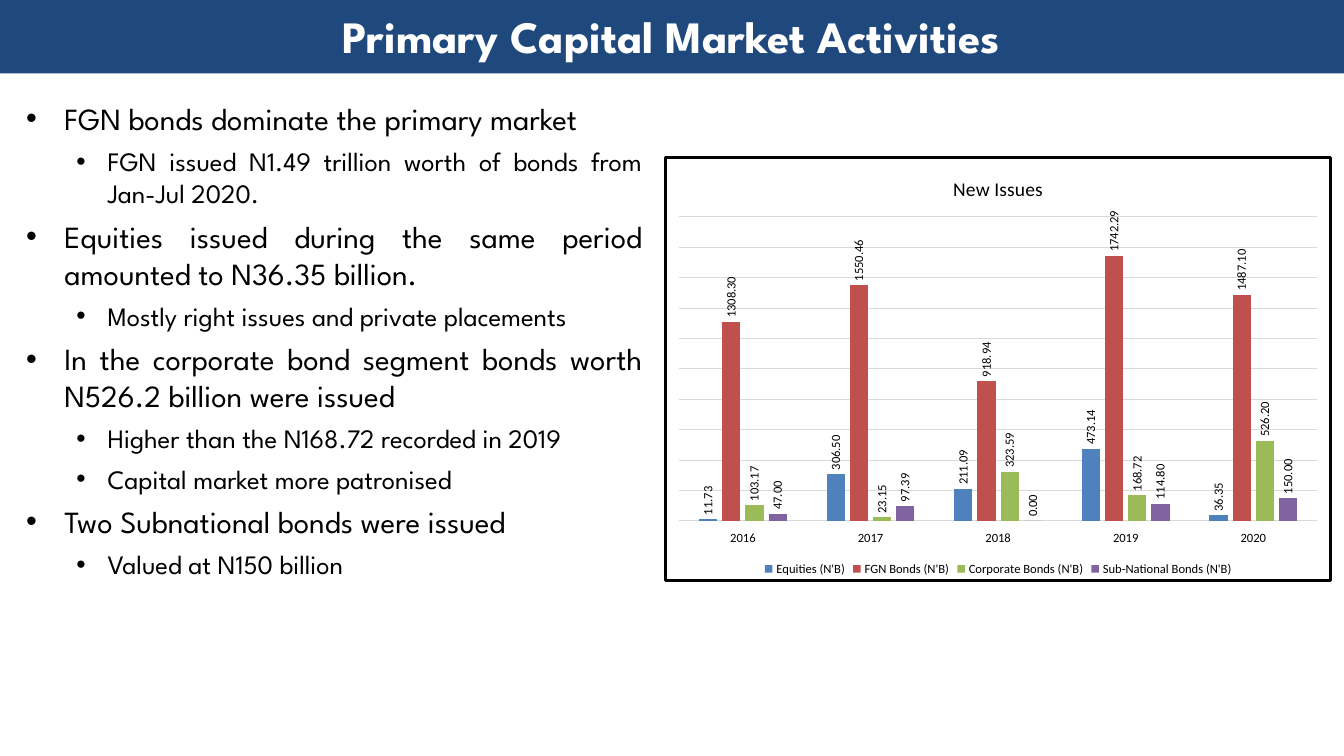
from lxml import etree
from pptx import Presentation
from pptx.chart.data import CategoryChartData
from pptx.dml.color import RGBColor
from pptx.enum.chart import XL_CHART_TYPE as ChartType
from pptx.enum.chart import XL_LABEL_POSITION as LabelPosition
from pptx.enum.chart import XL_LEGEND_POSITION as LegendPosition
from pptx.enum.chart import XL_TICK_LABEL_POSITION as TickLabels
from pptx.enum.chart import XL_TICK_MARK as TickMark
from pptx.enum.shapes import MSO_SHAPE as Preset
from pptx.enum.text import MSO_ANCHOR as Anchor
from pptx.enum.text import PP_ALIGN as Align
from pptx.oxml import parse_xml
from pptx.oxml.ns import nsdecls, qn
from pptx.util import Inches, Pt

NAVY = RGBColor(0x1F, 0x49, 0x7D)
WHITE = RGBColor(0xFF, 0xFF, 0xFF)
BLACK = RGBColor(0x00, 0x00, 0x00)
GRID_GREY = RGBColor(0xD9, 0xD9, 0xD9)
BLUE = RGBColor(0x4F, 0x81, 0xBD)
RED = RGBColor(0xC0, 0x50, 0x4D)
GREEN = RGBColor(0x9B, 0xBB, 0x59)
PURPLE = RGBColor(0x80, 0x64, 0xA2)

# Level and wording of each bullet
BULLETS = [
    (0, "FGN bonds dominate the primary market"),
    (1, "FGN issued N1.49 trillion worth of bonds from Jan-Jul 2020."),
    (0, "Equities issued during the same period amounted to N36.35 billion."),
    (1, "Mostly right issues and private placements"),
    (0, "In the corporate bond segment bonds worth N526.2 billion were issued"),
    (1, "Higher than the N168.72 recorded in 2019"),
    (1, "Capital market more patronised"),
    (0, "Two Subnational bonds were issued"),
    (1, "Valued at N150 billion"),
]
# Left margin, hanging indent and text size for each level
LEVELS = [(0.38, 0.38, 22), (0.81, 0.31, 19)]

YEARS = ["2016", "2017", "2018", "2019", "2020"]
ISSUES = [
    ("Equities (N'B)", BLUE, [11.73, 306.50, 211.09, 473.14, 36.35]),
    ("FGN Bonds (N'B)", RED, [1308.30, 1550.46, 918.94, 1742.29, 1487.10]),
    ("Corporate Bonds (N'B)", GREEN, [103.17, 23.15, 323.59, 168.72, 526.20]),
    ("Sub-National Bonds (N'B)", PURPLE, [47.00, 97.39, 0.00, 114.80, 150.00]),
]


def style_font(font, name, size, color, bold=False):
    font.name = name
    font.size = Pt(size)
    font.color.rgb = color
    font.bold = bold


deck = Presentation()
deck.slide_width = Inches(13.33)
deck.slide_height = Inches(7.5)
page = deck.slides.add_slide(deck.slide_layouts[6])

# Title band
band = page.shapes.add_shape(
    Preset.RECTANGLE, Inches(0), Inches(-0.03), Inches(13.33), Inches(0.76))
band.shadow.inherit = False
band.fill.solid()
band.fill.fore_color.rgb = NAVY
band.line.fill.background()
frame = band.text_frame
frame.vertical_anchor = Anchor.MIDDLE
frame.margin_left = frame.margin_right = Inches(0.13)
frame.margin_top = frame.margin_bottom = Inches(0.06)
para = frame.paragraphs[0]
para.text = "Primary Capital Market Activities"
para.alignment = Align.CENTER
style_font(para.font, "League Spartan", 32, WHITE, bold=True)

# Bullet list
box = page.shapes.add_textbox(
    Inches(0.16), Inches(0.94), Inches(6.31), Inches(5.67))
frame = box.text_frame
frame.word_wrap = True
for index, (level, wording) in enumerate(BULLETS):
    para = frame.add_paragraph() if index else frame.paragraphs[0]
    margin, hanging, size = LEVELS[level]
    para.text = wording
    para.level = level
    para.alignment = Align.JUSTIFY
    if index:
        para.space_before = Pt(6)
    props = para._p.get_or_add_pPr()
    props.set("marL", str(Inches(margin)))
    props.set("indent", str(-Inches(hanging)))
    etree.SubElement(props, qn("a:buFont")).set("typeface", "Arial")
    etree.SubElement(props, qn("a:buChar")).set("char", "•")
    style_font(para.font, "League Spartan", size, BLACK)

# Chart of new issues
data = CategoryChartData(number_format="0.00")
data.categories = YEARS
for name, color, values in ISSUES:
    data.add_series(name, values)
chart = page.shapes.add_chart(
    ChartType.COLUMN_CLUSTERED,
    Inches(6.59), Inches(1.55), Inches(6.62), Inches(4.22), data).chart
style_font(chart.font, "Calibri", 10, BLACK)
chart.has_title = True
title = chart.chart_title.text_frame.paragraphs[0]
title.text = "New Issues"
style_font(title.font, "Calibri", 14, BLACK)
chart.has_legend = True
chart.legend.position = LegendPosition.BOTTOM
chart.legend.include_in_layout = False
style_font(chart.legend.font, "Calibri", 9, BLACK)

# Axes
years_axis = chart.category_axis
years_axis.major_tick_mark = TickMark.NONE
years_axis.tick_label_position = TickLabels.LOW
years_axis.format.line.color.rgb = GRID_GREY
years_axis.format.line.width = Pt(0.75)
style_font(years_axis.tick_labels.font, "Calibri", 9, BLACK)
value_axis = chart.value_axis
value_axis.minimum_scale = 0
value_axis.maximum_scale = 2000
value_axis.major_unit = 200
value_axis.major_gridlines.format.line.color.rgb = GRID_GREY
value_axis.major_gridlines.format.line.width = Pt(0.75)
value_axis.visible = False

# Columns with upright value labels
plot = chart.plots[0]
plot.gap_width = 219
plot.overlap = -27
plot.vary_by_categories = False
for series, (name, color, values) in zip(plot.series, ISSUES):
    series.format.fill.solid()
    series.format.fill.fore_color.rgb = color
    series.invert_if_negative = False
    labels = series.data_labels
    labels.show_value = True
    labels.number_format = "0.00"
    labels.number_format_is_linked = False
    labels.position = LabelPosition.OUTSIDE_END
    style_font(labels.font, "Calibri", 9, BLACK)
    turn = labels._element.find(qn("c:txPr")).find(qn("a:bodyPr"))
    turn.set("rot", "-5400000")
    turn.set("vert", "horz")

# Plot area placement, as shares of the chart
plot_area = chart._chartSpace.chart.plotArea
for old_layout in plot_area.findall(qn("c:layout")):
    plot_area.remove(old_layout)
plot_area.insert(0, parse_xml(
    f'<c:layout {nsdecls("c")}><c:manualLayout><c:layoutTarget val="inner"/>'
    '<c:xMode val="edge"/><c:yMode val="edge"/><c:x val="0.02"/>'
    '<c:y val="0.14"/><c:w val="0.96"/><c:h val="0.72"/>'
    '</c:manualLayout></c:layout>'))

# Chart background and border
chart._chartSpace.find(qn("c:txPr")).addprevious(parse_xml(
    f'<c:spPr {nsdecls("c", "a")}>'
    f'<a:solidFill><a:srgbClr val="{WHITE}"/></a:solidFill>'
    f'<a:ln w="{Pt(2)}"><a:solidFill><a:srgbClr val="{BLACK}"/></a:solidFill>'
    '</a:ln></c:spPr>'))

deck.save("out.pptx")
